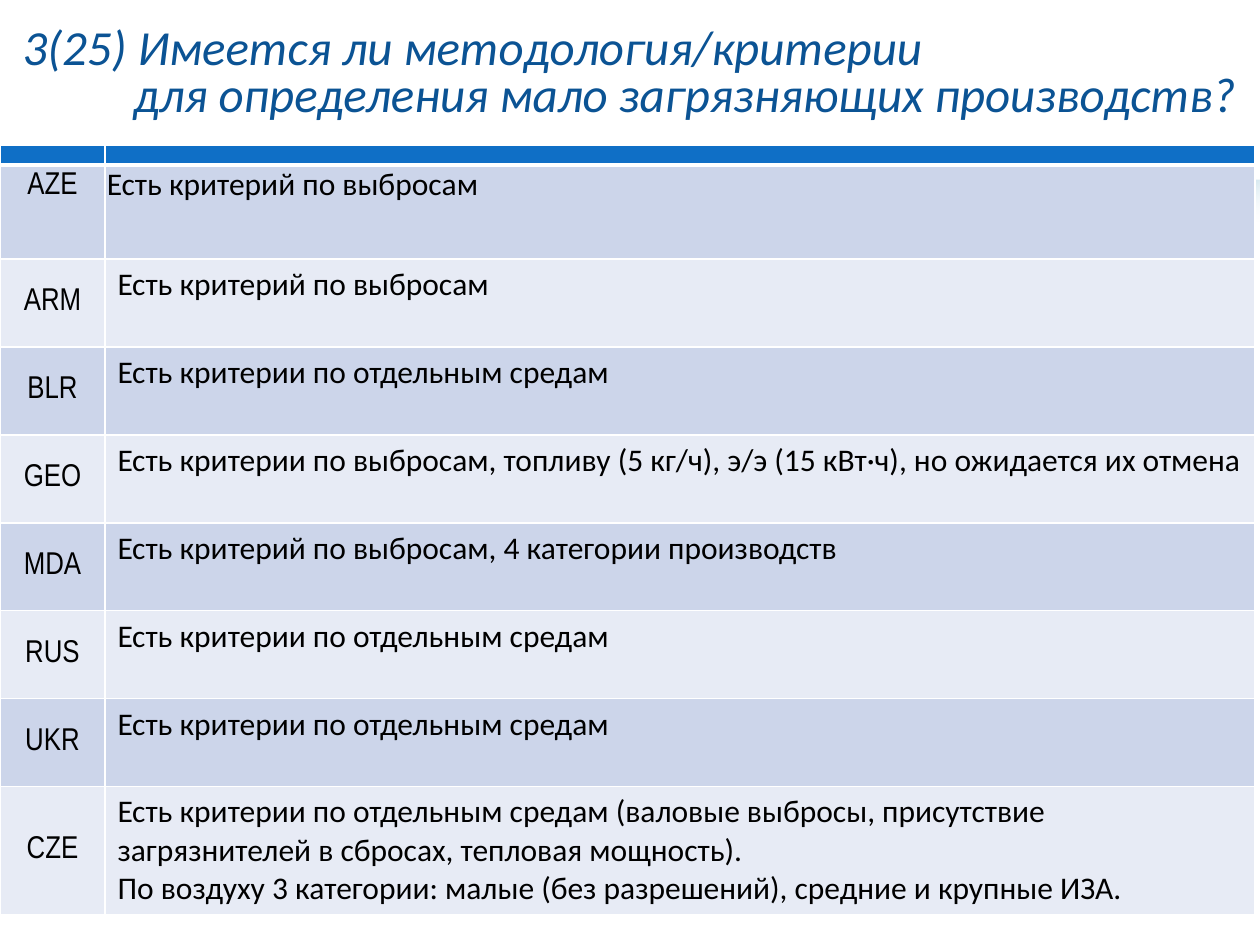
from dataclasses import dataclass

from lxml.etree import SubElement
from pptx import Presentation
from pptx.dml.color import RGBColor as RGB
from pptx.enum.shapes import MSO_SHAPE as Shape
from pptx.enum.text import MSO_ANCHOR as Anchor, MSO_AUTO_SIZE as AutoSize, PP_ALIGN as Align
from pptx.oxml.ns import qn
from pptx.util import Pt


@dataclass(frozen=True)
class Theme:
    white: str = "FFFFFF"
    ink: str = "000000"
    title: str = "0B5394"
    header: str = "0F6FC6"
    bands: tuple = ("CCD5EA", "E7EBF5")
    shade: str = "0076A3"
    font: str = "Calibri"
    code_font: str = "Arial Narrow"
    title_size: int = 28
    body_size: int = 18
    header_size: int = 8


TITLE = "3(25) Имеется ли методология/критерии\vдля определения мало загрязняющих производств?"
BY_MEDIA = "Есть критерии по отдельным средам"
BY_EMISSIONS = "Есть критерий по выбросам"
COUNTRIES = [
    ("AZE", [BY_EMISSIONS]),
    ("ARM", [BY_EMISSIONS]),
    ("BLR", [BY_MEDIA]),
    ("GEO", ["Есть критерии по выбросам, топливу (5 кг/ч), э/э (15 кВт·ч), но ожидается их отмена"]),
    ("MDA", [f"{BY_EMISSIONS}, 4 категории производств"]),
    ("RUS", [BY_MEDIA]),
    ("UKR", [BY_MEDIA]),
    ("CZE", [
        f"{BY_MEDIA} (валовые выбросы, присутствие загрязнителей в сбросах, тепловая мощность).",
        "По воздуху 3 категории: малые (без разрешений), средние и крупные ИЗА.",
    ]),
]
COLUMNS = [105, 1150]
ROWS = [20, 94] + [88] * 6 + [127]


def emu(px):
    return round(px * 914400 / 126)


def write(frame, lines, *, font, size, color, italic=False, align=Align.LEFT, spacing=None):
    for index, line in enumerate(lines):
        para = frame.paragraphs[0] if index == 0 else frame.add_paragraph()
        para.text = line
        para.alignment = align
        para.line_spacing = spacing
        for span in para.runs:
            span.font.name = font
            span.font.size = Pt(size)
            span.font.italic = italic
            span.font.color.rgb = RGB.from_string(color)


class SlideBuilder:
    def __init__(self, page, theme):
        self.page = page
        self.theme = theme

    def banner(self, left, top, width, height):
        banner = self.page.shapes.add_shape(
            Shape.FLOWCHART_DOCUMENT, *map(emu, (left, top, width, height)))
        banner.fill.solid()
        banner.fill.fore_color.rgb = RGB.from_string(self.theme.white)
        banner.line.fill.background()
        banner.shadow.inherit = False
        effects = banner.element.spPr.find(qn("a:effectLst"))
        shadow = SubElement(effects, qn("a:outerShdw"), blurRad=str(Pt(22)),
                            dist=str(Pt(3)), dir="5400000", rotWithShape="0")
        shade = SubElement(shadow, qn("a:srgbClr"), val=self.theme.shade)
        SubElement(shade, qn("a:alpha"), val="40000")
        self.page.shapes.title.element.addprevious(banner.element)

    def title(self, text, left, top, width, height, hanging):
        box = self.page.shapes.title
        box.left, box.top, box.width, box.height = map(emu, (left, top, width, height))
        frame = box.text_frame
        frame.word_wrap = True
        frame.auto_size = AutoSize.NONE
        frame.vertical_anchor = Anchor.MIDDLE
        write(frame, [text], font=self.theme.font, size=self.theme.title_size,
              color=self.theme.title, italic=True, spacing=0.8)
        properties = frame.paragraphs[0]._p.get_or_add_pPr()
        properties.set("marL", str(emu(hanging)))
        properties.set("indent", str(-emu(hanging)))

    def table(self, left, top, columns, rows):
        table = self.page.shapes.add_table(
            len(rows), len(columns), emu(left), emu(top),
            emu(sum(columns)), emu(sum(rows))).table
        for column, width in zip(table.columns, columns):
            column.width = emu(width)
        for row, height in zip(table.rows, rows):
            row.height = emu(height)
        return table

    def cell(self, cell, fill, bottom=1):
        properties = cell._tc.get_or_add_tcPr()
        for side, width in (("L", 1), ("R", 1), ("T", 1), ("B", bottom)):
            line = SubElement(properties, qn(f"a:ln{side}"), w=str(Pt(width)))
            paint = SubElement(line, qn("a:solidFill"))
            SubElement(paint, qn("a:srgbClr"), val=self.theme.white)
        cell.fill.solid()
        cell.fill.fore_color.rgb = RGB.from_string(fill)

    def insets(self, cell, side):
        cell.margin_left = cell.margin_right = emu(side)
        cell.margin_top = cell.margin_bottom = 0

    def header_row(self, cells):
        for cell in cells:
            self.cell(cell, self.theme.header, bottom=3)
            self.insets(cell, 0)
            SubElement(cell.text_frame.paragraphs[0]._p, qn("a:endParaRPr"),
                       sz=str(self.theme.header_size * 100))

    def country_row(self, cells, code, answer, band):
        code_cell, answer_cell = cells
        for cell in cells:
            self.cell(cell, band)
        style = {"size": self.theme.body_size, "color": self.theme.ink}
        code_cell.vertical_anchor = Anchor.MIDDLE
        write(code_cell.text_frame, [code], font=self.theme.code_font,
              align=Align.CENTER, **style)
        write(answer_cell.text_frame, answer, font=self.theme.font, **style)


def main():
    deck = Presentation()
    deck.slide_width, deck.slide_height = emu(1260), emu(945)
    theme = Theme()
    builder = SlideBuilder(deck.slides.add_slide(deck.slide_layouts[5]), theme)
    builder.banner(0, 0, 1260, 224)
    builder.title(TITLE, 10, 16, 1245, 117, hanging=111)

    table = builder.table(0, 145, COLUMNS, ROWS)
    header, *body = table.rows
    builder.header_row(list(header.cells))
    for index, (row, (code, answer)) in enumerate(zip(body, COUNTRIES)):
        builder.country_row(list(row.cells), code, answer, theme.bands[index % 2])
    table.cell(1, 0).vertical_anchor = Anchor.TOP
    builder.insets(table.cell(1, 1), 2)

    deck.save("out.pptx")


if __name__ == "__main__":
    main()
